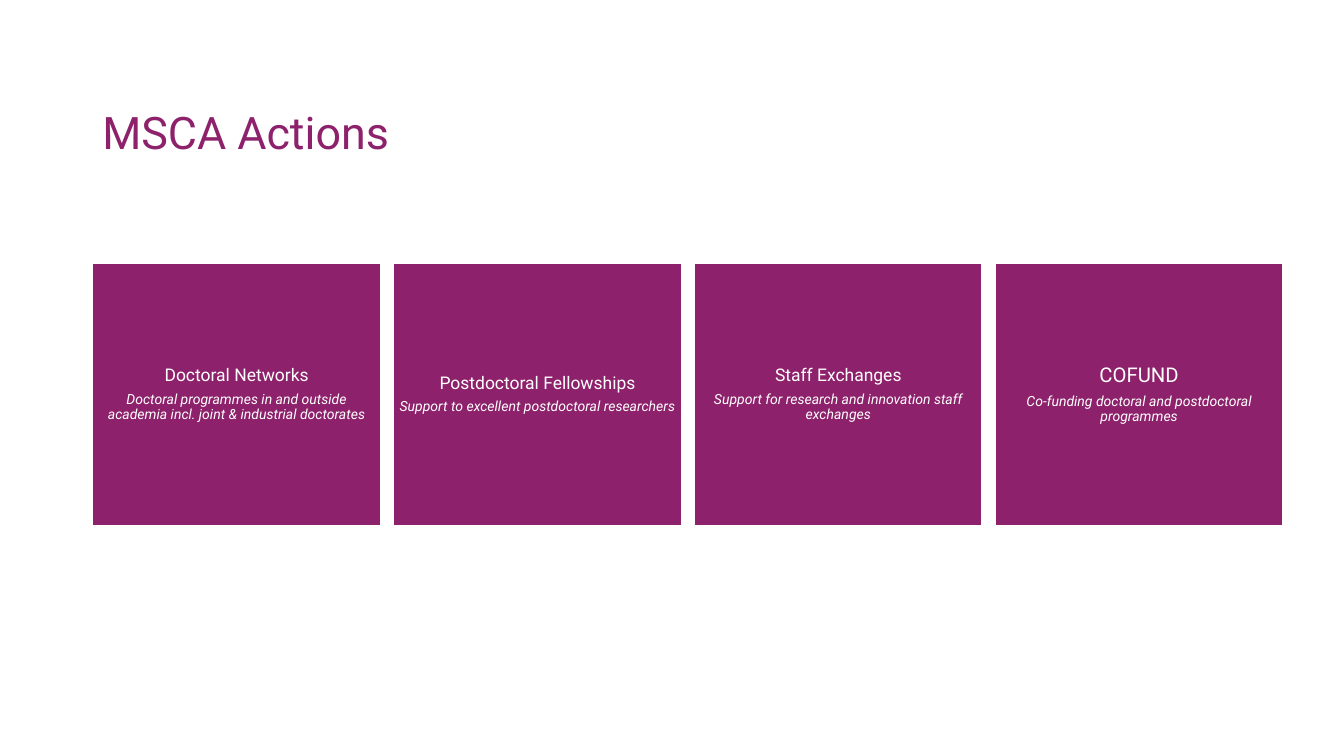
"""Build the MSCA Actions slide with its row of four action cards."""
from dataclasses import dataclass

from pptx import Presentation
from pptx import util as u
from pptx.dml import color
from pptx.enum import shapes, text


@dataclass(frozen=True)
class Theme:
    font: str = "Roboto"
    plum: color.RGBColor = color.RGBColor(0x8D, 0x21, 0x6B)
    white: color.RGBColor = color.RGBColor(0xFF, 0xFF, 0xFF)
    title: int = 64
    head: int = 25
    large: int = 29
    note: int = 20
    lead: float = 0.9
    after: float = 0.37


@dataclass(frozen=True)
class Card:
    head: str
    note: str
    size: int
    inset: float = 0.1


THEME = Theme()
LEFT, TOP, WIDTH, HEIGHT, STEP = 1.84, 5.23, 5.71, 5.2, 5.97
CARDS = (
    Card("Doctoral Networks",
         "Doctoral programmes in and outside academia incl. joint & industrial doctorates",
         THEME.head),
    Card("Postdoctoral Fellowships",
         "Support to excellent postdoctoral researchers", THEME.head),
    Card("Staff Exchanges",
         "Support for research and innovation staff exchanges", THEME.head),
    Card("COFUND",
         "Co-funding doctoral and postdoctoral programmes", THEME.large, 0.12),
)


def style(para, size: int, tint: color.RGBColor, italic: bool = False) -> None:
    para.line_spacing = THEME.lead
    para.font.name = THEME.font
    para.font.size = u.Pt(size)
    para.font.color.rgb = tint
    para.font.italic = italic


def setup(frame, across: float, down: float) -> None:
    frame.word_wrap = True
    frame.vertical_anchor = text.MSO_ANCHOR.MIDDLE
    frame.margin_left = frame.margin_right = u.Inches(across)
    frame.margin_top = frame.margin_bottom = u.Inches(down)


def add_title(slide, words: str) -> None:
    box = slide.shapes.add_textbox(
        u.Inches(1.83), u.Inches(1.63), u.Inches(23), u.Inches(2.11))
    setup(box.text_frame, 0.2, 0.1)
    para = box.text_frame.paragraphs[0]
    para.text = words
    style(para, THEME.title, THEME.plum)


def add_card(slide, card: Card, left: float) -> None:
    rect = slide.shapes.add_shape(
        shapes.MSO_SHAPE.RECTANGLE,
        u.Inches(left), u.Inches(TOP), u.Inches(WIDTH), u.Inches(HEIGHT))
    rect.shadow.inherit = False
    rect.fill.solid()
    rect.fill.fore_color.rgb = THEME.plum
    rect.line.color.rgb = THEME.white
    rect.line.width = u.Pt(2)
    frame = rect.text_frame
    setup(frame, card.inset, card.inset)
    head, note = frame.paragraphs[0], frame.add_paragraph()
    head.text, note.text = card.head, card.note
    for para, size in ((head, card.size), (note, THEME.note)):
        para.alignment = text.PP_ALIGN.CENTER
        para.space_after = u.Pt(size * THEME.after)
        style(para, size, THEME.white, para is note)


def main() -> None:
    deck = Presentation()
    deck.slide_width, deck.slide_height = u.Inches(26.67), u.Inches(15)
    slide = deck.slides.add_slide(deck.slide_layouts[6])
    add_title(slide, "MSCA Actions")
    for col, card in enumerate(CARDS):
        add_card(slide, card, LEFT + col * STEP)
    deck.save("out.pptx")


if __name__ == "__main__":
    main()
